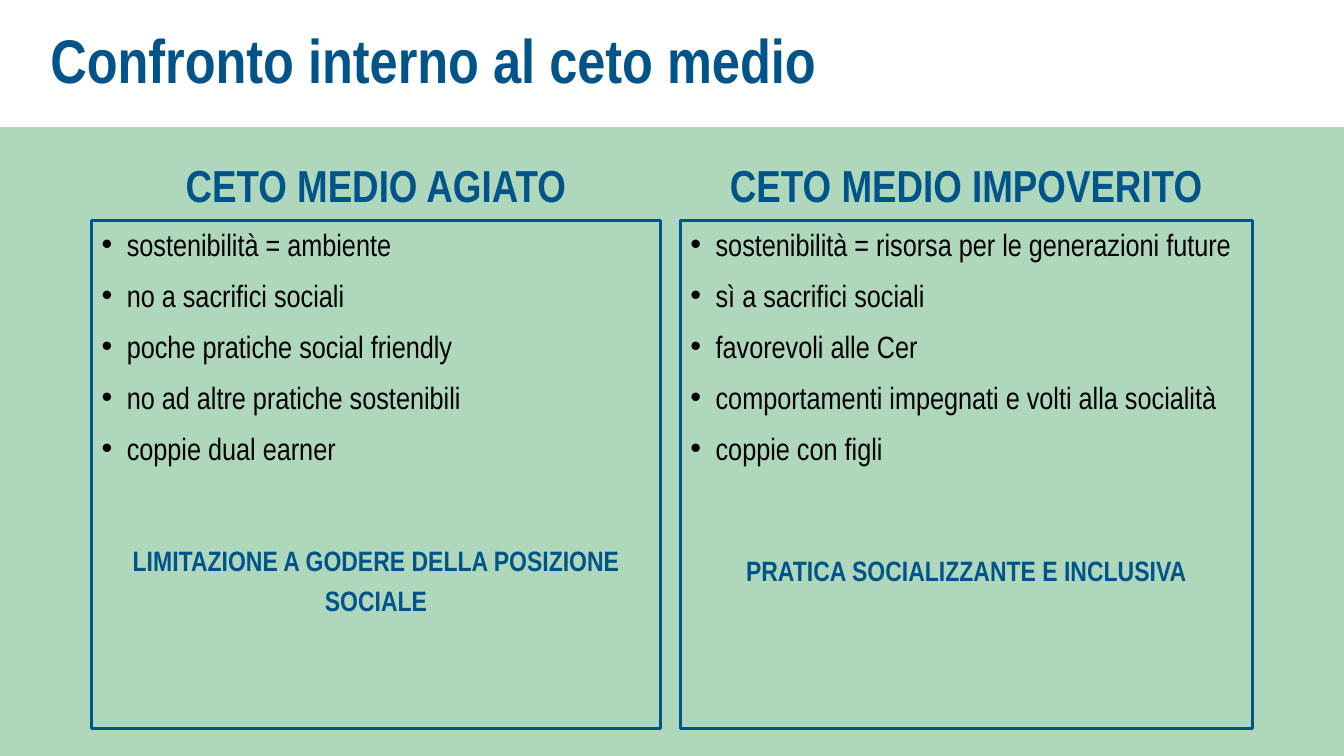
import pptx
import pptx.util
import pptx.dml.color
import pptx.enum.shapes
import pptx.enum.text
from dataclasses import dataclass
from lxml import etree

Inches, Pt = pptx.util.Inches, pptx.util.Pt
RGB = pptx.dml.color.RGBColor.from_string
ANCHOR = pptx.enum.text.MSO_ANCHOR
ALIGN = pptx.enum.text.PP_ALIGN

TITLE = "Confronto interno al ceto medio"
# left and width in inches, gap above the conclusion in points
COLUMNS = [
    {"left": 0.91, "width": 5.64, "gap": 50,
     "heading": "CETO MEDIO AGIATO",
     "points": ["sostenibilità = ambiente",
                "no a sacrifici sociali",
                "poche pratiche social friendly",
                "no ad altre pratiche sostenibili",
                "coppie dual earner"],
     "conclusion": "LIMITAZIONE A GODERE DELLA POSIZIONE SOCIALE"},
    {"left": 6.75, "width": 5.67, "gap": 57.2,
     "heading": "CETO MEDIO IMPOVERITO",
     "points": ["sostenibilità = risorsa per le generazioni future",
                "sì a sacrifici sociali",
                "favorevoli alle Cer",
                "comportamenti impegnati e volti alla socialità",
                "coppie con figli"],
     "conclusion": "PRATICA SOCIALIZZANTE E INCLUSIVA"},
]


@dataclass(frozen=True)
class Theme:
    font: str = "Arial Narrow"
    background: str = "AED7BC"
    band: str = "FFFFFF"
    accent: str = "005489"
    body: str = "000000"
    title_size: int = 44
    heading_size: int = 32
    point_size: int = 22
    conclusion_size: int = 20
    border: float = 2.25


THEME = Theme()
SLIDE_W, SLIDE_H = 13.33, 7.5
BAND_H = 1.26
HEADING_TOP, HEADING_H = 1.25, 0.9
PANEL_TOP, PANEL_H = 2.19, 5.04
BULLET_INDENT = Inches(0.25)


def add_rectangle(slide, left, top, width, height, anchor):
    rectangle = slide.shapes.add_shape(
        pptx.enum.shapes.MSO_SHAPE.RECTANGLE,
        Inches(left), Inches(top), Inches(width), Inches(height))
    rectangle.shadow.inherit = False
    rectangle.text_frame.word_wrap = True
    rectangle.text_frame.vertical_anchor = anchor
    return rectangle


def write(paragraph, text, size, color, bold=True, align=ALIGN.CENTER,
          spacing=0.9, before=0):
    paragraph.text = text
    paragraph.alignment = align
    paragraph.line_spacing = spacing
    paragraph.space_before = Pt(before)
    paragraph.font.name = THEME.font
    paragraph.font.size = Pt(size)
    paragraph.font.bold = bold
    paragraph.font.color.rgb = RGB(color)


def add_bullet(paragraph):
    properties = paragraph._p.get_or_add_pPr()
    properties.set("marL", str(BULLET_INDENT))
    properties.set("indent", str(-BULLET_INDENT))
    namespace = "{http://schemas.openxmlformats.org/drawingml/2006/main}"
    bullet_font = etree.Element(namespace + "buFont", typeface="Arial")
    bullet = etree.Element(namespace + "buChar", char="•")
    following = properties.find(namespace + "defRPr")
    for element in (bullet_font, bullet):
        if following is None:
            properties.append(element)
        else:
            following.addprevious(element)


def add_title(slide):
    band = add_rectangle(slide, 0, 0, SLIDE_W, BAND_H, ANCHOR.MIDDLE)
    band.fill.solid()
    band.fill.fore_color.rgb = RGB(THEME.band)
    band.line.fill.background()
    band.text_frame.margin_left = Inches(0.5)
    write(band.text_frame.paragraphs[0], TITLE, THEME.title_size,
          THEME.accent, align=ALIGN.LEFT)


def add_column(slide, column):
    left, width = column["left"], column["width"]
    heading = slide.shapes.add_textbox(
        Inches(left), Inches(HEADING_TOP), Inches(width), Inches(HEADING_H))
    heading.text_frame.word_wrap = True
    heading.text_frame.vertical_anchor = ANCHOR.BOTTOM
    write(heading.text_frame.paragraphs[0], column["heading"],
          THEME.heading_size, THEME.accent)

    panel = add_rectangle(slide, left, PANEL_TOP, width, PANEL_H, ANCHOR.TOP)
    panel.fill.background()
    panel.line.color.rgb = RGB(THEME.accent)
    panel.line.width = Pt(THEME.border)
    frame = panel.text_frame
    for index, point in enumerate(column["points"]):
        paragraph = frame.add_paragraph() if index else frame.paragraphs[0]
        write(paragraph, point, THEME.point_size, THEME.body, bold=False,
              align=ALIGN.LEFT, spacing=1.0, before=10 if index else 0)
        add_bullet(paragraph)
    write(frame.add_paragraph(), column["conclusion"], THEME.conclusion_size,
          THEME.accent, spacing=1.2, before=column["gap"])


def main():
    deck = pptx.Presentation()
    deck.slide_width, deck.slide_height = Inches(SLIDE_W), Inches(SLIDE_H)
    slide = deck.slides.add_slide(deck.slide_layouts[6])
    slide.background.fill.solid()
    slide.background.fill.fore_color.rgb = RGB(THEME.background)
    add_title(slide)
    for column in COLUMNS:
        add_column(slide, column)
    deck.save("out.pptx")


if __name__ == "__main__":
    main()
